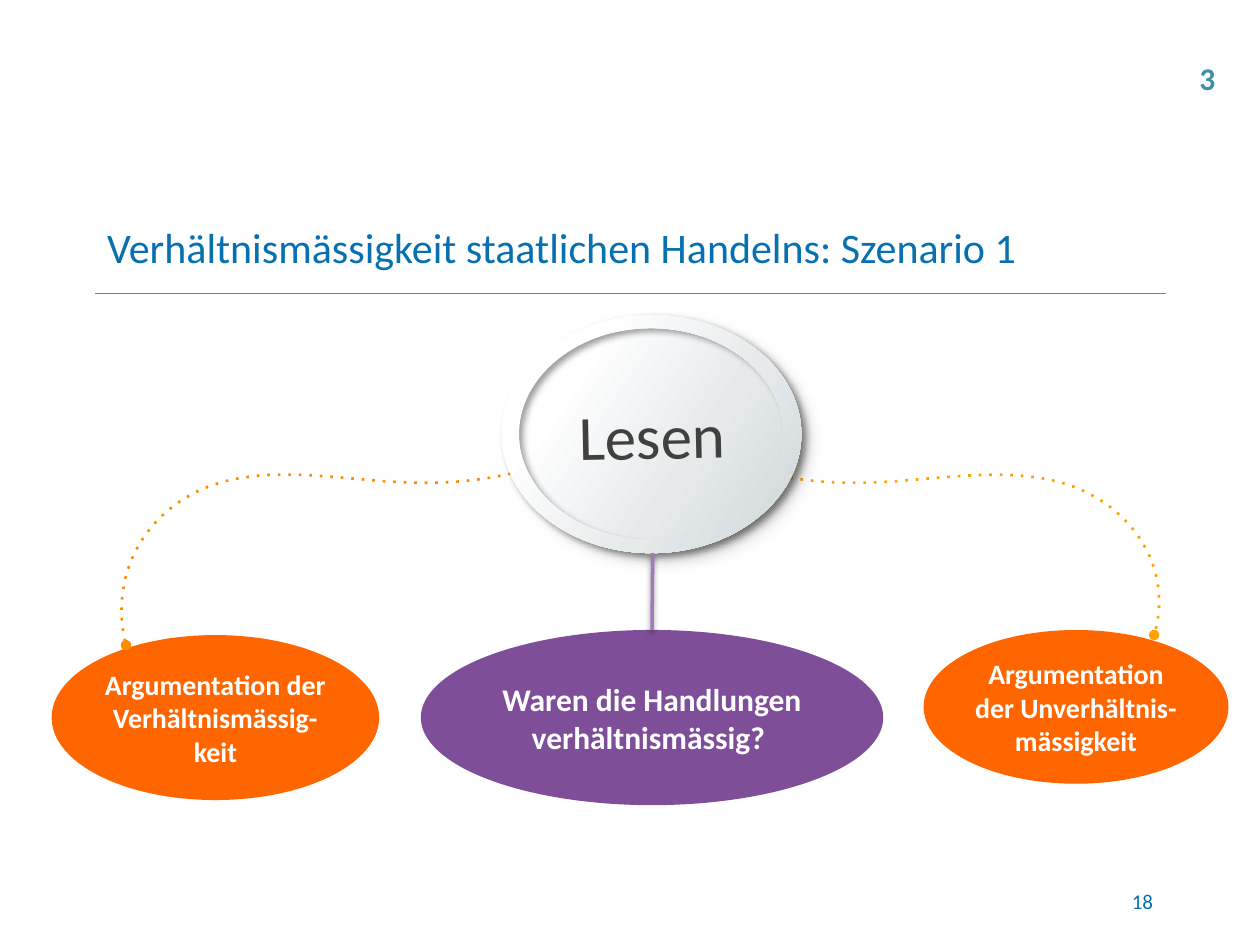
from lxml import etree
from pptx import Presentation
from pptx.dml.color import RGBColor
from pptx.enum import shapes, text
from pptx.oxml import parse_xml
from pptx.oxml.ns import qn
from pptx.util import Inches, Pt

FONT = "Calibri"
COLORS = {
    "title": "0770B1", "rule": "0BA7DF", "orange": "FF6600", "purple": "7E4E99",
    "stem": "A379BB", "dark": "404040", "white": "FFFFFF", "corner": "3E8EA9",
    "left arc": "FF8A00", "right arc": "FF9F00",
}
SILVER_STOPS = [(23, "FFFFFF"), (63, "E6EAEB"), (100, "CDD5D8")]
SILVER_ANGLE = 35

TITLE = "Verhältnismässigkeit staatlichen Handelns: Szenario 1"
# text, box, fill, size, arc that leads to the bubble
BUBBLES = [
    ("Argumentation der Verhältnismässig-keit", (0.41, 5.04, 2.6, 1.31),
     "orange", 16, "left arc"),
    ("Argumentation der Unverhältnis-mässigkeit", (7.33, 5, 2.42, 1.22),
     "orange", 16, "right arc"),
    ("Waren die Handlungen verhältnismässig? ", (3.34, 5, 3.67, 1.39),
     "purple", 18, None),
]
# box of the visible curve; start point, then two controls and an end for each curve
ARCS = {
    "left arc": ((0.96, 3.73, 3.21, 1.39),
                 [(4.17, 3.73), (3.87, 3.81), (3.57, 3.84), (3.26, 3.83),
                  (2.56, 3.81), (1.77, 3.58), (1.24, 4.14),
                  (1, 4.4), (0.91, 4.77), (1, 5.12)]),
    "right arc": ((5.99, 3.73, 3.21, 1.31),
                  [(5.99, 3.73), (6.29, 3.81), (6.59, 3.84), (6.9, 3.83),
                   (7.6, 3.81), (8.39, 3.59), (8.92, 4.12),
                   (9.16, 4.36), (9.26, 4.71), (9.16, 5.04)]),
}
RING_BOX = (3.98, 2.5, 2.38, 1.89)
RING_RADII = [(1.19, 0.945), (1.05, 0.84)]  # outer, inner
CIRCLE_HANDLE = 0.55  # control distance of a quarter circle, in radii


def color(name):
    return RGBColor.from_string(COLORS[name])


def write(shape, words, size, color_name, bold=False, align=text.PP_ALIGN.CENTER,
          anchor=text.MSO_ANCHOR.MIDDLE, margins=None, wrap=True):
    frame = shape.text_frame
    frame.text = words
    frame.word_wrap = wrap
    frame.vertical_anchor = anchor
    if margins:
        frame.margin_left = frame.margin_right = Inches(margins[0])
        frame.margin_top = frame.margin_bottom = Inches(margins[1])
    paragraph = frame.paragraphs[0]
    paragraph.alignment = align
    font = paragraph.runs[0].font
    font.name, font.size, font.bold = FONT, Pt(size), bold
    font.color.rgb = color(color_name)


def set_shadow(shape, blur=None, distance=0, angle=0):
    """Replace the theme's shadow by none, or by a soft black one (points, degrees)."""
    effects = etree.SubElement(shape._element.spPr, qn("a:effectLst"))
    if blur is not None:
        shadow = etree.SubElement(effects, qn("a:outerShdw"), blurRad=str(Pt(blur)),
                                  dist=str(Pt(distance)), dir=str(angle * 60000),
                                  algn="tl", rotWithShape="0")
        black = etree.SubElement(shadow, qn("a:srgbClr"), val="000000")
        etree.SubElement(black, qn("a:alpha"), val="38000")


def fill_silver(shape):
    stops = "".join(f'<a:gs pos="{position * 1000}"><a:srgbClr val="{value}"/></a:gs>'
                    for position, value in SILVER_STOPS)
    gradient = parse_xml(
        '<a:gradFill xmlns:a="http://schemas.openxmlformats.org/drawingml/2006/main"'
        f' rotWithShape="1"><a:gsLst>{stops}</a:gsLst>'
        f'<a:lin ang="{SILVER_ANGLE * 60000}" scaled="0"/></a:gradFill>')
    shape.fill.solid()
    properties = shape._element.spPr
    properties.replace(properties.find(qn("a:solidFill")), gradient)
    shape.line.fill.background()


def add_ellipse(parent, box):
    shape = parent.shapes.add_shape(shapes.MSO_SHAPE.OVAL, *map(Inches, box))
    shape.line.fill.background()
    return shape


def add_line(slide, start, end, color_name, width):
    line = slide.shapes.add_connector(shapes.MSO_CONNECTOR.STRAIGHT,
                                      *map(Inches, start + end))
    line.line.color.rgb = color(color_name)
    line.line.width = Pt(width)
    return line


def add_curves(parent, contours, box, close):
    """Build a freeform, then turn every three segments into one cubic curve."""
    contours = [[(Inches(x), Inches(y)) for x, y in contour] for contour in contours]
    builder = parent.shapes.build_freeform(*contours[0][0])
    for index, contour in enumerate(contours):
        if index:
            builder.move_to(*contour[0])
        builder.add_line_segments(contour[1:], close=close)
    shape = builder.convert_to_shape()

    outline = next(shape._element.iter(qn("a:path")))
    segments = outline.findall(qn("a:lnTo"))
    for first in range(0, len(segments) - 2, 3):
        curve = etree.Element(qn("a:cubicBezTo"))
        segments[first].addprevious(curve)
        for segment in segments[first:first + 3]:
            curve.append(segment[0])
            outline.remove(segment)

    left, top, width, height = map(Inches, box)
    for point in outline.iter(qn("a:pt")):
        point.set("x", str(int(point.get("x")) + shape.left - left))
        point.set("y", str(int(point.get("y")) + shape.top - top))
    outline.set("w", str(width))
    outline.set("h", str(height))
    shape.left, shape.top, shape.width, shape.height = left, top, width, height
    return shape


def ellipse_curves(center, radii, direction):
    """Controls of four quarter curves, clockwise for 1 and back for -1."""
    k = CIRCLE_HANDLE
    unit = [(1, 0), (1, k), (k, 1), (0, 1), (-k, 1), (-1, k), (-1, 0),
            (-1, -k), (-k, -1), (0, -1), (k, -1), (1, -k), (1, 0)]
    return [(center[0] + radii[0] * x, center[1] + radii[1] * y)
            for x, y in unit[::direction]]


def add_arc(slide, name):
    box, controls = ARCS[name]
    arc = add_curves(slide, [controls], box, close=False)
    arc.fill.background()
    arc.line.color.rgb = color(name)
    arc.line.width = Pt(1.5)
    outline = arc.line._get_or_add_ln()
    etree.SubElement(outline, qn("a:prstDash"), val="dot")
    for end in ("a:headEnd", "a:tailEnd"):
        etree.SubElement(outline, qn(end), type="oval")
    set_shadow(arc)


def add_button(slide):
    group = slide.shapes.add_group_shape()
    face = add_ellipse(group, (4.06, 2.55, 2.23, 1.79))
    face.rotation = 358.8
    fill_silver(face)
    set_shadow(face, 12, 7.1, 39)
    write(face, "Lesen", 36, "dark", margins=(0.04, 0.04))
    left, top, width, height = RING_BOX
    center = (left + width / 2, top + height / 2)
    contours = [ellipse_curves(center, radii, direction)
                for radii, direction in zip(RING_RADII, (1, -1))]
    ring = add_curves(group, contours, RING_BOX, close=True)
    fill_silver(ring)
    set_shadow(ring, 4, 2.8, 39)


def main():
    presentation = Presentation()
    presentation.slide_width, presentation.slide_height = Inches(10), Inches(7.5)
    slide = presentation.slides.add_slide(presentation.slide_layouts[5])

    set_shadow(add_line(slide, (0.75, 2.33), (9.25, 2.33), "rule", 1))
    title = slide.shapes.title
    title.left, title.top, title.width, title.height = map(Inches, (0.75, 1.58, 8.5, 0.75))
    write(title, TITLE, 24, "title", align=text.PP_ALIGN.LEFT)
    page_number = slide.shapes.add_textbox(*map(Inches, (7.17, 6.95, 2.08, 0.4)))
    write(page_number, "18", 12, "title", align=text.PP_ALIGN.RIGHT)

    for words, box, fill, size, arc in BUBBLES:
        bubble = add_ellipse(slide, box)
        bubble.fill.solid()
        bubble.fill.fore_color.rgb = color(fill)
        set_shadow(bubble)
        write(bubble, words, size, "white", bold=True, margins=(0.04, 0.05))
        if arc:
            add_arc(slide, arc)
    add_button(slide)

    stem = add_line(slide, (5.18, 4.39), (5.17, 5), "stem", 2)
    stem.end_connect(bubble, 0)
    set_shadow(stem, 3.1, 1.6, 90)

    corner_number = slide.shapes.add_textbox(*map(Inches, (9.42, 0.42, 0.33, 0.4)))
    write(corner_number, "3", 18, "corner", bold=True, align=text.PP_ALIGN.LEFT,
          anchor=text.MSO_ANCHOR.TOP, wrap=False)
    presentation.save("out.pptx")


if __name__ == "__main__":
    main()
